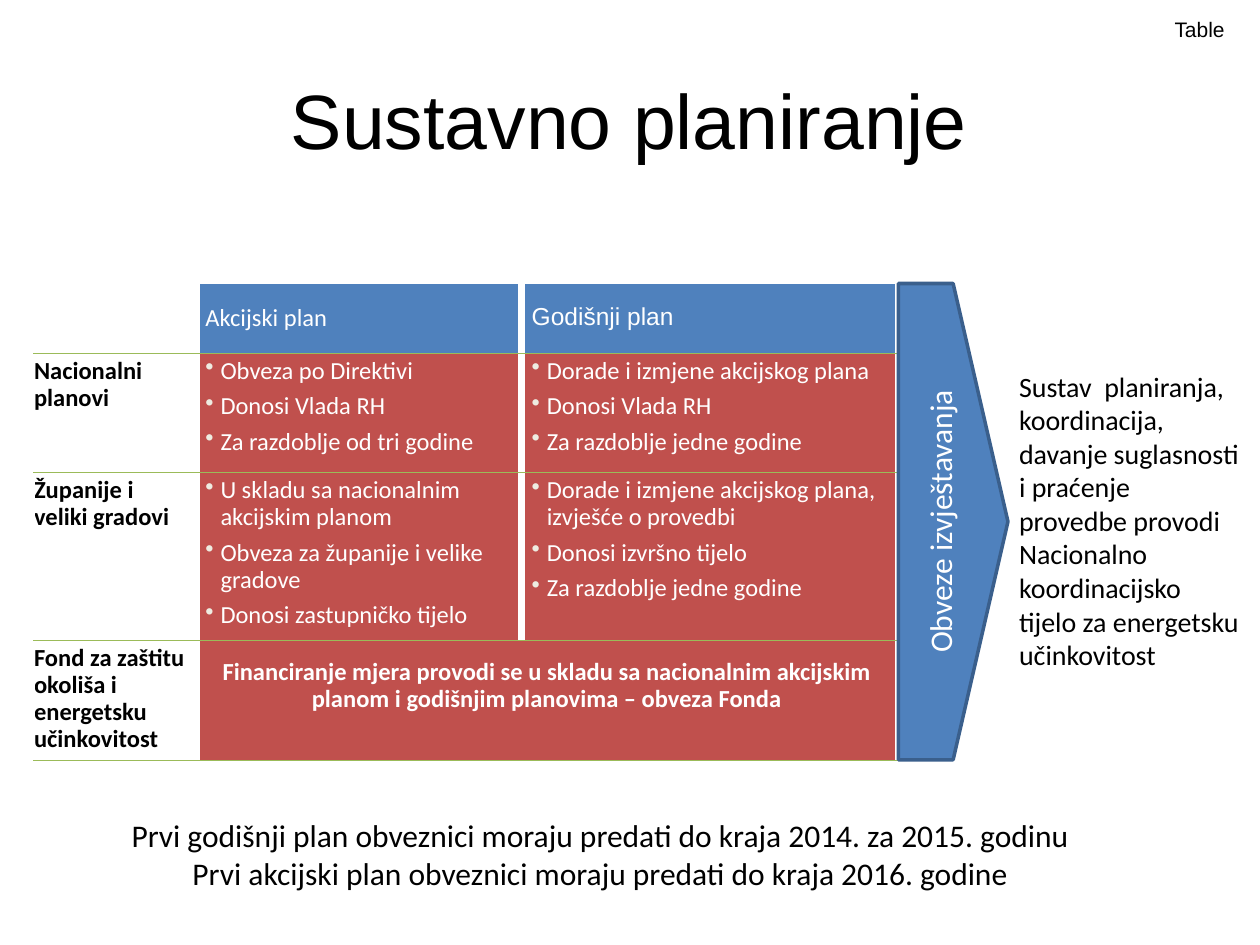
from lxml.etree import SubElement
from pptx import Presentation
from pptx.dml.color import RGBColor
from pptx.enum.shapes import MSO_SHAPE
from pptx.enum.text import MSO_ANCHOR, MSO_AUTO_SIZE, PP_ALIGN
from pptx.oxml.ns import qn
from pptx.util import Inches, Pt

BLACK, WHITE = "000000", "FFFFFF"
BLUE, DARK_BLUE, RED, GREEN = "4F81BD", "3A5F8C", "C0504D", "9BBB59"
BULLET_COLOR = "EEECE1"

TABLE_LEFT, TABLE_TOP = 0.27, 2.25
COLUMN_WIDTHS = [1.28, 2.59, 2.99]
ROW_HEIGHTS = [0.55, 0.95, 1.33, 0.95]
TABLE_WIDTH, TABLE_HEIGHT = sum(COLUMN_WIDTHS), sum(ROW_HEIGHTS)

HEADERS = [("Akcijski plan", "Calibri"), ("Godišnji plan", "Arial")]
PLANS = [
    ("Nacionalni planovi",
     ["Obveza po Direktivi", "Donosi Vlada RH", "Za razdoblje od tri godine"],
     ["Dorade i izmjene akcijskog plana", "Donosi Vlada RH", "Za razdoblje jedne godine"]),
    ("Županije i veliki gradovi",
     ["U skladu sa nacionalnim akcijskim planom", "Obveza za županije i velike gradove",
      "Donosi zastupničko tijelo"],
     ["Dorade i izmjene akcijskog plana, izvješće o provedbi", "Donosi izvršno tijelo",
      "Za razdoblje jedne godine"]),
]
FUND = "Fond za zaštitu okoliša i energetsku učinkovitost"
FUNDING = ("Financiranje mjera provodi se u skladu sa nacionalnim akcijskim planom "
           "i godišnjim planovima – obveza Fonda")
COORDINATION = ("Sustav  planiranja, koordinacija, davanje suglasnosti i praćenje provedbe "
                "provodi Nacionalno koordinacijsko tijelo za energetsku učinkovitost")
DEADLINES = ("Prvi godišnji plan obveznici moraju predati do kraja 2014. za 2015. godinu\n"
             "Prvi akcijski plan obveznici moraju predati do kraja 2016. godine")


def color(value):
    return RGBColor.from_string(value)


def write(text_frame, text, size, font="Calibri", fill=BLACK, bold=False,
          align=PP_ALIGN.LEFT, line_spacing=None, space_before=0):
    text_frame.text = text
    for paragraph in text_frame.paragraphs:
        paragraph.alignment = align
        paragraph.line_spacing = line_spacing
        paragraph.space_before = Pt(space_before)
        for run in paragraph.runs:
            run.font.size = Pt(size)
            run.font.name = font
            run.font.bold = bold
            run.font.color.rgb = color(fill)


def add_bullets(text_frame):
    for paragraph in text_frame.paragraphs:
        properties = paragraph._p.get_or_add_pPr()
        properties.set("marL", str(Inches(0.12)))
        properties.set("indent", str(Inches(-0.12)))
        bullet_color = SubElement(properties, qn("a:buClr"))
        SubElement(bullet_color, qn("a:srgbClr"), val=BULLET_COLOR)
        SubElement(properties, qn("a:buChar"), char="•")


def set_borders(cell, borders):
    """Draw borders given as {side: (color, points)}, sides in the order L, R, T, B."""
    properties = cell._tc.get_or_add_tcPr()
    for index, (side, (line_color, width)) in enumerate(borders.items()):
        line = SubElement(properties, qn(f"a:ln{side}"), w=str(Pt(width)))
        fill = SubElement(line, qn("a:solidFill"))
        SubElement(fill, qn("a:srgbClr"), val=line_color)
        properties.insert(index, line)


def format_cell(cell, row, column):
    cell.margin_left = Inches(0 if column == 0 and row else 0.08)
    cell.margin_right = Inches(0.08)
    cell.margin_top = cell.margin_bottom = Inches(0.04)
    if column == 0:
        cell.fill.background()
    else:
        cell.fill.solid()
        cell.fill.fore_color.rgb = color(RED if row else BLUE)
    set_borders(cell, {
        "L": (WHITE, (1, 6, 4.5)[column]),
        "R": (WHITE, (6, 4.5, 4.5)[column]),
        "T": (GREEN, 0.25) if row else (WHITE, 1),
        "B": (GREEN, 0.25),
    })


def write_cell(cell, text, **style):
    write(cell.text_frame, text, 14, line_spacing=0.9, **style)


def add_plan_table(slide):
    frame = slide.shapes.add_table(
        len(ROW_HEIGHTS), len(COLUMN_WIDTHS), Inches(TABLE_LEFT), Inches(TABLE_TOP),
        Inches(TABLE_WIDTH), Inches(TABLE_HEIGHT))
    table = frame.table
    table.first_row = table.horz_banding = False
    for column, width in zip(table.columns, COLUMN_WIDTHS):
        column.width = Inches(width)
    for row, height in zip(table.rows, ROW_HEIGHTS):
        row.height = Inches(height)
    for row in range(len(ROW_HEIGHTS)):
        for column in range(len(COLUMN_WIDTHS)):
            format_cell(table.cell(row, column), row, column)

    for column, (header, font) in enumerate(HEADERS, 1):
        cell = table.cell(0, column)
        cell.vertical_anchor = MSO_ANCHOR.MIDDLE
        write_cell(cell, header, font=font, fill=WHITE)
    for row, (label, *plans) in enumerate(PLANS, 1):
        write_cell(table.cell(row, 0), label, bold=True)
        for column, points in enumerate(plans, 1):
            cell = table.cell(row, column)
            write_cell(cell, "\n".join(points), fill=WHITE, space_before=5)
            add_bullets(cell.text_frame)

    write_cell(table.cell(3, 0), FUND, bold=True)
    funding = table.cell(3, 1)
    funding.merge(table.cell(3, 2))
    funding.vertical_anchor = MSO_ANCHOR.MIDDLE
    funding.margin_bottom = Inches(0.26)
    write_cell(funding, FUNDING, fill=WHITE, bold=True, align=PP_ALIGN.CENTER, space_before=5)


def add_reporting_arrow(slide):
    arrow = slide.shapes.add_shape(
        MSO_SHAPE.PENTAGON, Inches(TABLE_LEFT + TABLE_WIDTH), Inches(TABLE_TOP),
        Inches(0.87), Inches(TABLE_HEIGHT))
    arrow.shadow.inherit = False
    arrow.fill.solid()
    arrow.fill.fore_color.rgb = color(BLUE)
    arrow.line.color.rgb = color(DARK_BLUE)
    arrow.line.width = Pt(2)
    text_frame = arrow.text_frame
    text_frame.vertical_anchor = MSO_ANCHOR.MIDDLE
    text_frame._txBody.bodyPr.set("vert", "vert270")
    write(text_frame, "Obveze izvještavanja", 18, fill=WHITE, align=PP_ALIGN.CENTER)


def add_text(slide, box, text, size, **style):
    text_frame = slide.shapes.add_textbox(*map(Inches, box)).text_frame
    text_frame.word_wrap = True
    text_frame.auto_size = MSO_AUTO_SIZE.SHAPE_TO_FIT_TEXT
    write(text_frame, text, size, **style)
    return text_frame


def place_title(slide, text):
    title = slide.shapes.title
    title.left, title.top, title.width, title.height = map(Inches, (0.27, 0.76, 9.45, 0.36))
    title.text_frame.auto_size = MSO_AUTO_SIZE.NONE
    title.text_frame.vertical_anchor = MSO_ANCHOR.MIDDLE
    write(title.text_frame, text, 44, font="Arial", align=PP_ALIGN.CENTER)


def main():
    presentation = Presentation()
    presentation.slide_width, presentation.slide_height = Inches(10), Inches(7.5)
    slide = presentation.slides.add_slide(presentation.slide_layouts[5])
    place_title(slide, "Sustavno planiranje")
    add_plan_table(slide)
    tag = add_text(slide, (9.32, 0.15, 0.4, 0.18), "Table", 12, font="Arial",
                   align=PP_ALIGN.RIGHT, line_spacing=0.9)
    tag.word_wrap = False
    tag.margin_left = tag.margin_right = tag.margin_top = tag.margin_bottom = 0
    add_reporting_arrow(slide)
    add_text(slide, (7.99, 2.88, 1.97, 2.52), COORDINATION, 16)
    add_text(slide, (0.83, 6.43, 7.87, 0.71), DEADLINES, 18, align=PP_ALIGN.CENTER)
    presentation.save("out.pptx")


if __name__ == "__main__":
    main()
